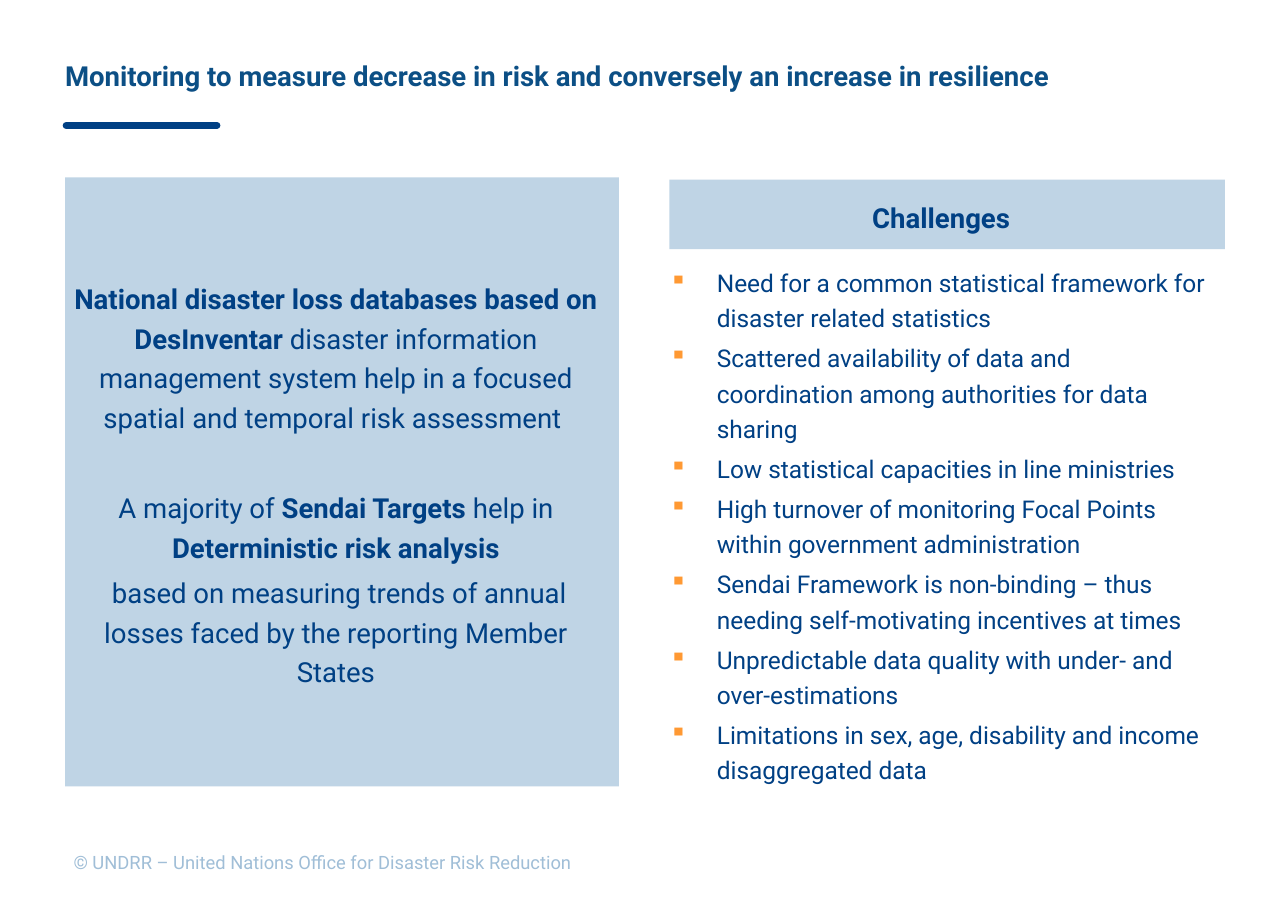
from dataclasses import dataclass

from lxml.etree import SubElement
from pptx import Presentation
from pptx.dml.color import RGBColor
from pptx.enum.shapes import MSO_CONNECTOR, MSO_SHAPE
from pptx.enum.text import MSO_ANCHOR as Anchor, MSO_AUTO_SIZE, PP_ALIGN as Align
from pptx.oxml.ns import qn
from pptx.util import Pt


@dataclass(frozen=True)
class Theme:
    font: str = "Roboto"
    title: str = "0C4F85"
    ink: str = "004084"
    panel: str = "BFD4E5"
    bullet: str = "FF9933"
    footer: str = "A0BED7"
    heading_size: float = 18
    list_size: float = 16
    footer_size: float = 12
    spacing: float = 1.2
    insets: tuple = (0, 4.3, 7.9, 4.3)


THEME = Theme()

TITLE = "Monitoring to measure decrease in risk and conversely an increase in resilience"
FOOTER = "© UNDRR – United Nations Office for Disaster Risk Reduction"
STATEMENTS = [
    "**National disaster loss databases based on DesInventar **disaster information "
    "management system help in a focused spatial and temporal risk assessment ",
    "A majority of **Sendai Targets **help in **Deterministic risk analysis**",
    " based on measuring trends of annual losses faced by the reporting Member States",
]
CHALLENGES = [
    "Need for a common statistical framework for disaster related statistics",
    "Scattered availability of data and coordination among authorities for data sharing",
    "Low statistical capacities in line ministries",
    "High turnover of monitoring Focal Points within government administration",
    "Sendai Framework is non-binding – thus needing self-motivating incentives at times",
    "Unpredictable data quality with under- and over-estimations",
    "Limitations in sex, age, disability and income disaggregated data",
]


def rgb(value):
    return RGBColor.from_string(value)


def add_bullet(paragraph, indent=31):
    properties = paragraph._p.get_or_add_pPr()
    properties.set("marL", str(Pt(indent)))
    properties.set("indent", str(-Pt(indent)))
    colour = SubElement(properties, qn("a:buClr"))
    SubElement(colour, qn("a:srgbClr"), val=THEME.bullet)
    SubElement(properties, qn("a:buChar"), char="▪")


def write(shape, paragraphs, *, size=THEME.heading_size, color=THEME.ink, align=Align.LEFT,
          anchor=Anchor.TOP, insets=THEME.insets, spacing=THEME.spacing, gaps=None,
          bulleted=False):
    """Fill a shape with text; ** switches bold on and off, gaps is the space between paragraphs."""
    frame = shape.text_frame
    frame.word_wrap = True
    frame.auto_size = MSO_AUTO_SIZE.NONE
    frame.vertical_anchor = anchor
    frame.margin_left, frame.margin_top, frame.margin_right, frame.margin_bottom = map(Pt, insets)
    for index, text in enumerate(paragraphs):
        paragraph = frame.add_paragraph() if index else frame.paragraphs[0]
        if bulleted:
            add_bullet(paragraph)
        paragraph.alignment = align
        paragraph.line_spacing = spacing
        paragraph.space_before = Pt(gaps[index - 1] if index else 0)
        for part, words in enumerate(text.split("**")):
            if words:
                run = paragraph.add_run()
                run.text = words
                run.font.name = THEME.font
                run.font.size = Pt(size)
                run.font.bold = part % 2 == 1
                run.font.color.rgb = rgb(color)


def add_panel(slide, left, top, width, height, paragraphs, gaps=None):
    panel = slide.shapes.add_shape(MSO_SHAPE.RECTANGLE, *map(Pt, (left, top, width, height)))
    panel.shadow.inherit = False
    panel.fill.solid()
    panel.fill.fore_color.rgb = rgb(THEME.panel)
    panel.line.fill.background()
    write(panel, paragraphs, align=Align.CENTER, anchor=Anchor.MIDDLE, gaps=gaps)


def add_heading(slide, left, top, width, height):
    title = slide.shapes.title
    title.left, title.top, title.width, title.height = map(Pt, (left, top, width, height))
    write(title, [f"**{TITLE}**"], color=THEME.title, anchor=Anchor.MIDDLE, spacing=1)

    rule_left, rule_top = left + 0.7, top + height - 2.2
    rule = slide.shapes.add_connector(
        MSO_CONNECTOR.STRAIGHT,
        *map(Pt, (rule_left, rule_top, rule_left + 98.6, rule_top)))
    rule.line.color.rgb = rgb(THEME.ink)
    rule.line.width = Pt(4.5)
    rule.line._get_or_add_ln().set("cap", "rnd")
    SubElement(rule._element.spPr, qn("a:effectLst"))


def add_challenges(slide, left, top, width, height):
    header_height, gap = 45.4, 4.3
    add_panel(slide, left, top, width, header_height, ["**Challenges**"])
    list_top = top + header_height + gap
    challenges = slide.shapes.add_textbox(
        *map(Pt, (left, list_top, width, top + height - list_top)))
    write(challenges, CHALLENGES, size=THEME.list_size, bulleted=True,
          gaps=[3.2] * (len(CHALLENGES) - 1))


def add_footer(slide, left, top, width, height):
    footer = slide.shapes.add_textbox(*map(Pt, (left, top, width, height)))
    write(footer, [FOOTER], size=THEME.footer_size, color=THEME.footer,
          insets=(7.2, 3.6, 7.2, 3.6), spacing=1)


def main():
    deck = Presentation()
    deck.slide_width, deck.slide_height = Pt(841.68), Pt(595.44)
    slide = deck.slides.add_slide(deck.slide_layouts[5])
    add_heading(slide, 42.5, 14.4, 757.5, 69.8)
    add_panel(slide, 42.5, 116, 362, 398, STATEMENTS, gaps=[33, 3.6])
    add_challenges(slide, 437.5, 117.4, 363, 418.3)
    add_footer(slide, 41, 553, 741.6, 21.6)
    deck.save("out.pptx")


if __name__ == "__main__":
    main()
